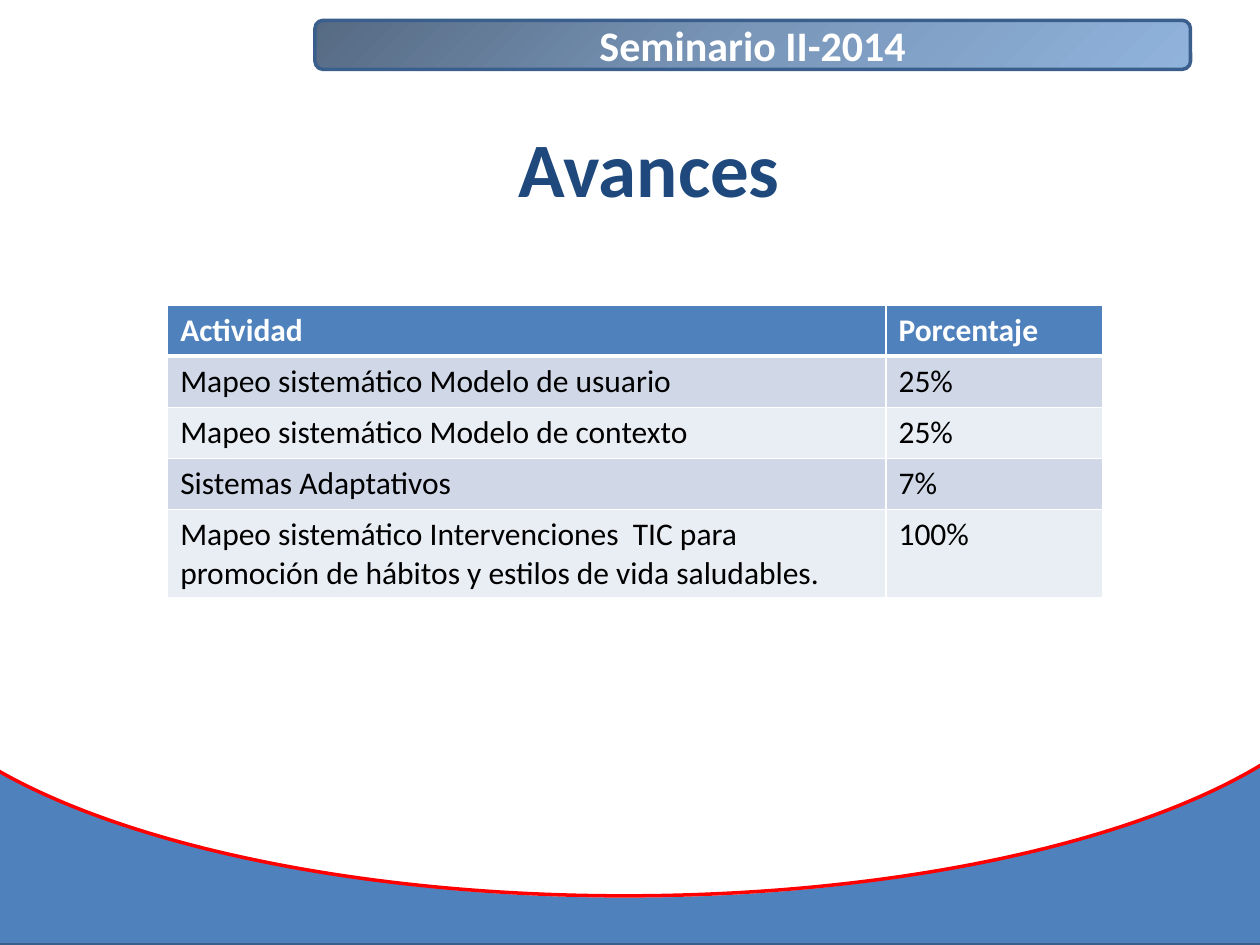
from copy import deepcopy
from dataclasses import dataclass
from typing import Optional

from lxml import etree
from pptx import Presentation
from pptx.dml.color import RGBColor
from pptx.enum.shapes import MSO_SHAPE
from pptx.enum.text import MSO_ANCHOR, PP_ALIGN
from pptx.oxml.ns import qn
from pptx.util import Cm, Pt

RECTANGLE, OVAL = MSO_SHAPE.RECTANGLE, MSO_SHAPE.OVAL
ROUNDED = MSO_SHAPE.ROUNDED_RECTANGLE
MIDDLE = MSO_ANCHOR.MIDDLE
CENTER, LEFT = PP_ALIGN.CENTER, PP_ALIGN.LEFT

FONT = "Calibri"
COLORS = {
    "blue": "4F81BD", "edge": "3A5F8C", "red": "FF0000", "white": "FFFFFF",
    "black": "000000", "title": "1F497D", "band_dark": "D0D8E8", "band_light": "E9EDF4",
}
BANNER_STOPS = ((0, "566A83"), (0.5, "7A97BA"), (1, "90B3DC"))
ACTIVITIES = (
    ("Actividad", "Porcentaje"),
    ("Mapeo sistemático Modelo de usuario", "25%"),
    ("Mapeo sistemático Modelo de contexto", "25%"),
    ("Sistemas Adaptativos", "7%"),
    ("Mapeo sistemático Intervenciones  TIC para promoción de hábitos "
     "y estilos de vida saludables.", "100%"),
)
COLUMN_WIDTHS = (14.48, 4.37)
ROW_HEIGHT = 1.03


@dataclass
class Panel:
    """An outlined shape, with its place in centimetres."""
    kind: int
    left: float
    top: float
    width: float
    height: float
    line: str
    fill: Optional[str] = None


BACKDROP = (
    Panel(RECTANGLE, -2.39, 9.73, 30.76, 9.32, "edge", "blue"),
    Panel(OVAL, -2.77, 6.15, 30.76, 11.91, "white", "white"),
    Panel(OVAL, -2.39, 7.14, 29.97, 10.92, "red"),
    Panel(RECTANGLE, -2.39, 0, 30.76, 14.88, "white", "white"),
)
BANNER = Panel(ROUNDED, 6.35, 0.41, 17.65, 0.99, "edge")


def rgb(name: str) -> RGBColor:
    return RGBColor.from_string(COLORS[name])


def write(frame, text: str, size: int, color: str, bold: bool, align) -> None:
    frame.text = text
    frame.word_wrap = True
    para = frame.paragraphs[0]
    para.alignment = align
    for span in para.runs:
        span.font.name, span.font.size, span.font.bold = FONT, Pt(size), bold
        span.font.color.rgb = rgb(color)


def draw_panel(page, panel: Panel):
    shape = page.shapes.add_shape(panel.kind, Cm(panel.left), Cm(panel.top),
                                  Cm(panel.width), Cm(panel.height))
    shape.shadow.inherit = False
    shape.line.color.rgb = rgb(panel.line)
    shape.line.width = Pt(2)
    if panel.fill:
        shape.fill.solid()
        shape.fill.fore_color.rgb = rgb(panel.fill)
    else:
        shape.fill.background()
    return shape


def draw_banner(page) -> None:
    shape = draw_panel(page, BANNER)
    shape.fill.gradient()
    shape.fill.gradient_angle = 315
    # The default gradient has two stops; a third is added
    stop_list = shape._element.spPr.find(".//" + qn("a:gsLst"))
    stop_list.append(deepcopy(stop_list[0]))
    for stop, (position, color) in zip(shape.fill.gradient_stops, BANNER_STOPS):
        stop.position = position
        stop.color.rgb = RGBColor.from_string(color)
    shape.text_frame.vertical_anchor = MIDDLE
    write(shape.text_frame, "Seminario II-2014", 24, "white", True, CENTER)


def draw_title(page) -> None:
    box = page.shapes.add_textbox(Cm(2.97), Cm(1.78), Cm(20.24), Cm(3.18))
    box.text_frame.vertical_anchor = MIDDLE
    write(box.text_frame, "Avances", 44, "title", True, CENTER)


def set_border(cell, side: str, points: int) -> None:
    properties = cell._tc.get_or_add_tcPr()
    line = etree.SubElement(properties, qn(f"a:ln{side}"), w=str(Pt(points)))
    fill = etree.SubElement(line, qn("a:solidFill"))
    etree.SubElement(fill, qn("a:srgbClr"), val=COLORS["white"])


def draw_table(page) -> None:
    rows, columns = len(ACTIVITIES), len(COLUMN_WIDTHS)
    table = page.shapes.add_table(rows, columns, Cm(3.38), Cm(6.15),
                                  Cm(sum(COLUMN_WIDTHS)), Cm(ROW_HEIGHT * rows)).table
    for column, width in zip(table.columns, COLUMN_WIDTHS):
        column.width = Cm(width)
    for index, texts in enumerate(ACTIVITIES):
        header = index == 0
        band = "blue" if header else "band_dark" if index % 2 else "band_light"
        for cell, text in zip(table.rows[index].cells, texts):
            write(cell.text_frame, text, 18, "white" if header else "black", header, LEFT)
            for side in "LRTB":
                heavy = (side == "B" and header) or (side == "T" and index == 1)
                set_border(cell, side, 3 if heavy else 1)
            cell.fill.solid()
            cell.fill.fore_color.rgb = rgb(band)


def main() -> None:
    deck = Presentation()
    deck.slide_width, deck.slide_height = Cm(25.4), Cm(19.05)
    page = deck.slides.add_slide(deck.slide_layouts[6])

    # Curved blue footer
    for panel in BACKDROP:
        draw_panel(page, panel)

    # Heading and content
    draw_banner(page)
    draw_title(page)
    draw_table(page)
    deck.save("out.pptx")


if __name__ == "__main__":
    main()
